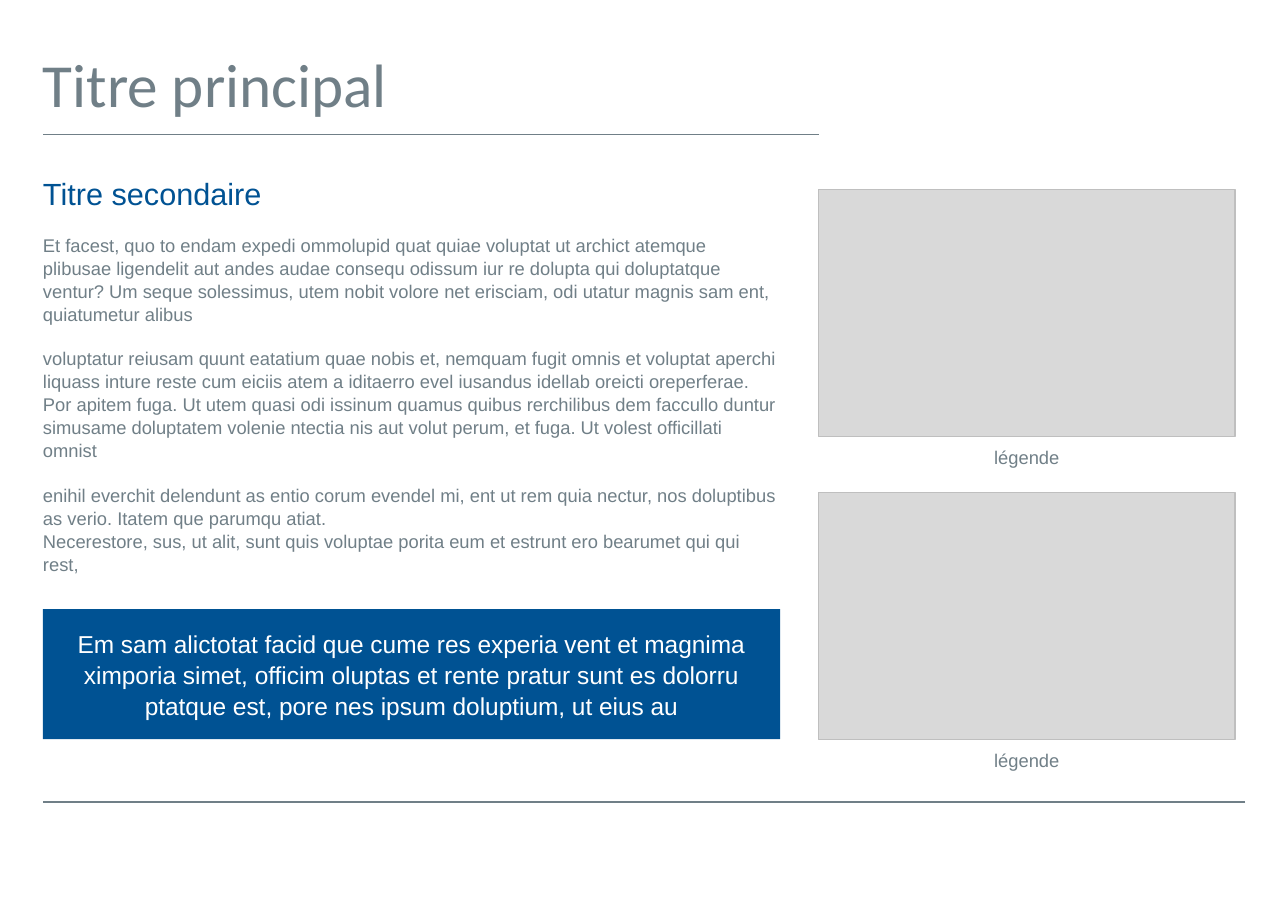
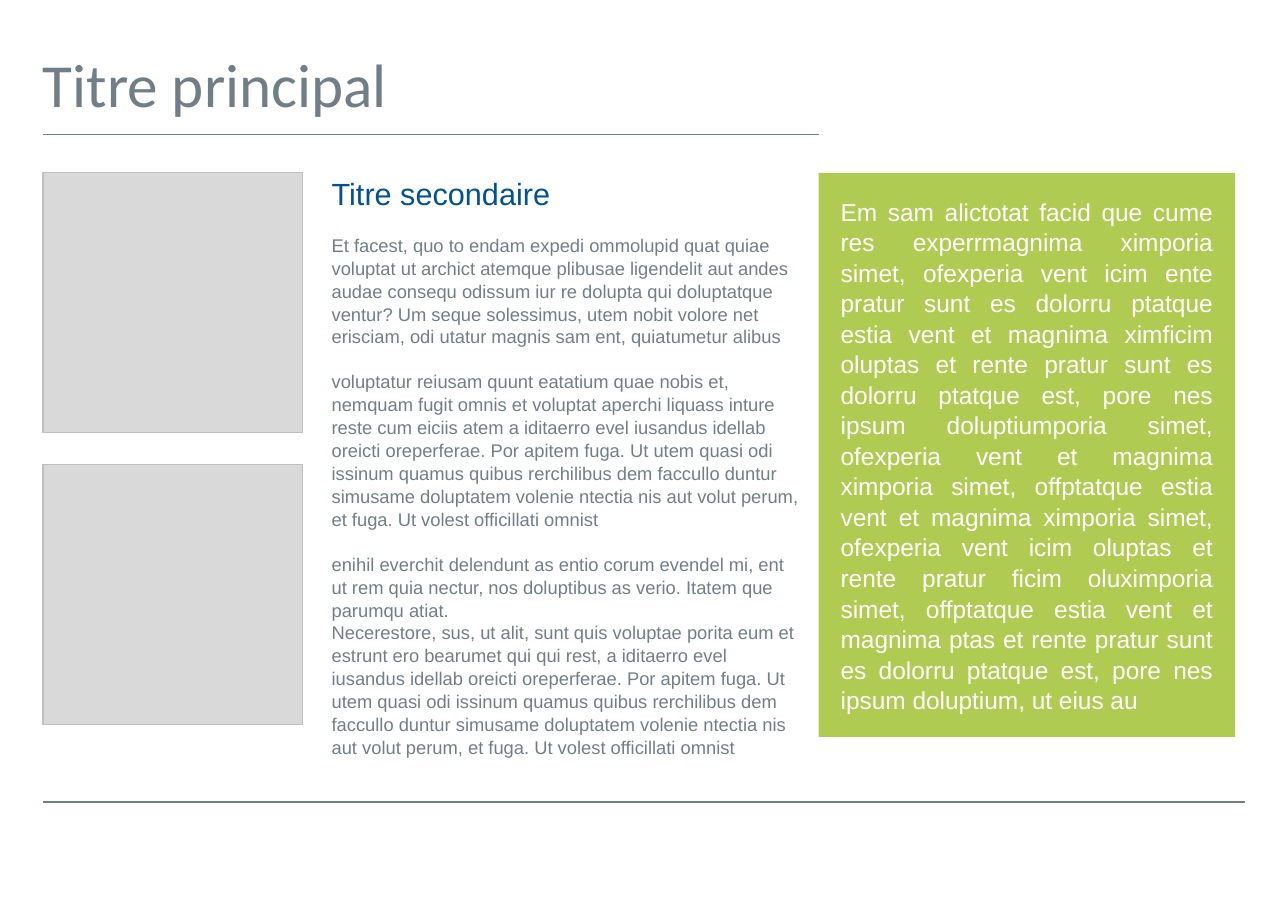
from lxml import etree
from pptx import Presentation
from pptx.dml.color import RGBColor
from pptx.enum.shapes import MSO_CONNECTOR, MSO_SHAPE
from pptx.enum.text import MSO_ANCHOR, MSO_AUTO_SIZE, PP_ALIGN
from pptx.oxml.ns import qn
from pptx.util import Pt

RECTANGLE = MSO_SHAPE.RECTANGLE
STRAIGHT = MSO_CONNECTOR.STRAIGHT
TOP, MIDDLE = MSO_ANCHOR.TOP, MSO_ANCHOR.MIDDLE
LEFT, CENTER, JUSTIFY = PP_ALIGN.LEFT, PP_ALIGN.CENTER, PP_ALIGN.JUSTIFY
NO_AUTOFIT = MSO_AUTO_SIZE.NONE

PX = 9144  # 100 px to the inch
PAGE_WIDTH, PAGE_HEIGHT = 1169, 827
MARGIN = 39
CONTENT_TOP = 157
RIGHT_COLUMN, RIGHT_WIDTH = 743, 378
LINE_SPACING = 1.04
PARAGRAPH_GAP = 14.4

COLORS = {
    "grey": "707F87",
    "blue": "005293",
    "green": "B0CB52",
    "white": "FFFFFF",
    "frame fill": "D9D9D9",
    "frame line": "BFBFBF",
}

TITLE = "Titre principal"
SUBTITLE = "Titre secondaire"
CAPTION = "légende"
PASSAGES = [
    "Et facest, quo to endam expedi ommolupid quat quiae voluptat ut archict atemque "
    "plibusae ligendelit aut andes audae consequ odissum iur re dolupta qui doluptatque "
    "ventur? Um seque solessimus, utem nobit volore net erisciam, odi utatur magnis sam "
    "ent, quiatumetur alibus",
    "voluptatur reiusam quunt eatatium quae nobis et, nemquam fugit omnis et voluptat "
    "aperchi liquass inture reste cum eiciis atem a iditaerro evel iusandus idellab "
    "oreicti oreperferae. Por apitem fuga. Ut utem quasi odi issinum quamus quibus "
    "rerchilibus dem faccullo duntur simusame doluptatem volenie ntectia nis aut volut "
    "perum, et fuga. Ut volest officillati omnist",
    "enihil everchit delendunt as entio corum evendel mi, ent ut rem quia nectur, nos "
    "doluptibus as verio. Itatem que parumqu atiat.",
]
SHORT_ENDING = (
    "Necerestore, sus, ut alit, sunt quis voluptae porita eum et estrunt ero bearumet "
    "qui qui rest,"
)
LONG_ENDING = SHORT_ENDING + (
    " a iditaerro evel iusandus idellab oreicti oreperferae. Por apitem fuga. Ut utem "
    "quasi odi issinum quamus quibus rerchilibus dem faccullo duntur simusame doluptatem "
    "volenie ntectia nis aut volut perum, et fuga. Ut volest officillati omnist"
)
BLUE_MESSAGE = (
    "Em sam alictotat facid que cume res experia vent et magnima ximporia simet, officim "
    "oluptas et rente pratur sunt es dolorru ptatque est, pore nes ipsum doluptium, ut "
    "eius au"
)
GREEN_MESSAGE = (
    "Em sam alictotat facid que cume res experrmagnima ximporia simet, ofexperia vent "
    "icim ente pratur sunt es dolorru ptatque estia vent et magnima ximficim oluptas et "
    "rente pratur sunt es dolorru ptatque est, pore nes ipsum doluptiumporia simet, "
    "ofexperia vent et magnima ximporia simet, offptatque estia vent et magnima ximporia "
    "simet, ofexperia vent icim oluptas et rente pratur ficim oluximporia simet, "
    "offptatque estia vent et magnima ptas et rente pratur sunt es dolorru ptatque est, "
    "pore nes ipsum doluptium, ut eius au"
)


def color(name):
    return RGBColor.from_string(COLORS[name])


def scaled(*lengths):
    return [length * PX for length in lengths]


class Brochure:
    """Holds the deck, its style and the page being filled."""

    def __init__(self):
        self.deck = Presentation()
        self.deck.slide_width, self.deck.slide_height = scaled(PAGE_WIDTH, PAGE_HEIGHT)
        self.page = None

    def new_page(self, title):
        self.page = self.deck.slides.add_slide(self.deck.slide_layouts[1])
        self.rule(728, 1130)
        box = self.page.shapes.title
        self.place(box, MARGIN, 39, 1052, 83)
        self.prepare(box.text_frame)
        self.fill_para(box.text_frame.paragraphs[0], title, 40, "grey", font="Calibri")
        self.rule(122, RIGHT_COLUMN)

    def place(self, box, left, top, width, height):
        box.left, box.top, box.width, box.height = scaled(left, top, width, height)

    def prepare(self, frame, anchor=TOP, insets=(0, 0, 0, 0)):
        """Set wrapping, anchor and the left, top, right and bottom insets."""
        frame.word_wrap = True
        frame.auto_size = NO_AUTOFIT
        frame.vertical_anchor = anchor
        (frame.margin_left, frame.margin_top,
         frame.margin_right, frame.margin_bottom) = scaled(*insets)

    def fill_para(self, para, text, size, ink, align=LEFT, gap=0, font="Arial"):
        para.text = text
        para.alignment = align
        para.line_spacing = LINE_SPACING
        para.space_before = Pt(gap)
        para.space_after = Pt(0)
        para.font.name = font
        para.font.size = Pt(size)
        para.font.color.rgb = color(ink)

    def rule(self, y, right):
        line = self.page.shapes.add_connector(STRAIGHT, *scaled(right, y, MARGIN, y))
        line.line.color.rgb = color("grey")
        line.line.width = Pt(1)
        etree.SubElement(line._element.spPr, qn("a:effectLst"))

    def article(self, left, width, height, passages, ending):
        """Fill the body with a heading, spaced passages and an ending set tight."""
        box = self.page.placeholders[1]
        self.place(box, left, CONTENT_TOP, width, height)
        frame = box.text_frame
        self.prepare(frame)
        entries = [(SUBTITLE, 20, "blue", 0)]
        entries += [(passage, 12, "grey", PARAGRAPH_GAP) for passage in passages]
        entries.append((ending, 12, "grey", 0))
        for index, (text, size, ink, gap) in enumerate(entries):
            para = frame.add_paragraph() if index else frame.paragraphs[0]
            properties = para._p.get_or_add_pPr()
            properties.set("marL", "0")
            properties.set("indent", "0")
            etree.SubElement(properties, qn("a:buNone"))
            self.fill_para(para, text, size, ink, gap=gap)

    def rectangle(self, left, top, width, height, fill):
        box = self.page.shapes.add_shape(RECTANGLE, *scaled(left, top, width, height))
        box.shadow.inherit = False
        box.fill.solid()
        box.fill.fore_color.rgb = color(fill)
        return box

    def frame(self, left, top, width, height):
        box = self.rectangle(left, top, width, height, "frame fill")
        box.line.color.rgb = color("frame line")
        box.line.width = Pt(0.75)

    def panel(self, left, top, width, height, fill, text, align):
        box = self.rectangle(left, top, width, height, fill)
        box.line.fill.background()
        self.prepare(box.text_frame, MIDDLE, (20, 20, 20, 20))
        self.fill_para(box.text_frame.paragraphs[0], text, 16, "white", align)

    def caption(self, left, top, width, text):
        box = self.page.shapes.add_textbox(*scaled(left, top, width, 34))
        self.prepare(box.text_frame, insets=(0, 8, 0, 0))
        self.fill_para(box.text_frame.paragraphs[0], text, 12, "grey", CENTER)


def main():
    brochure = Brochure()

    brochure.new_page(TITLE)
    brochure.article(MARGIN, 669, 314, PASSAGES, SHORT_ENDING)
    brochure.panel(MARGIN, 553, 669, 118, "blue", BLUE_MESSAGE, CENTER)
    frame_height = 224
    for top in (172, 447):
        brochure.frame(RIGHT_COLUMN, top, RIGHT_WIDTH, frame_height)
        brochure.caption(RIGHT_COLUMN, top + frame_height, RIGHT_WIDTH, CAPTION)

    brochure.new_page(TITLE)
    brochure.article(301, 425, 439, PASSAGES, LONG_ENDING)
    side = 236
    for top in (CONTENT_TOP, 422):
        brochure.frame(MARGIN, top, side, side)
    brochure.panel(RIGHT_COLUMN, CONTENT_TOP, RIGHT_WIDTH, 512, "green",
                   GREEN_MESSAGE, JUSTIFY)

    brochure.deck.save("out.pptx")


if __name__ == "__main__":
    main()
